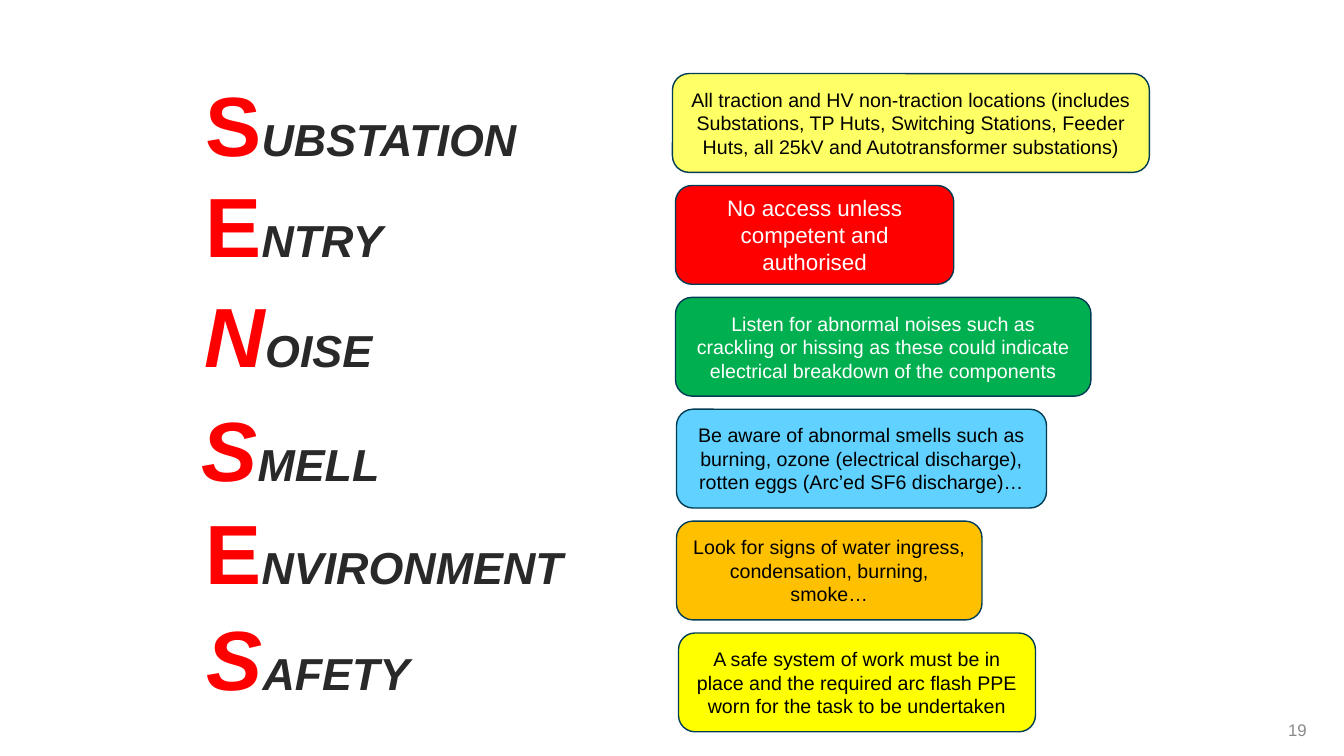
import pptx
import pptx.util
import pptx.dml.color
import pptx.enum.shapes
import pptx.enum.text

Inches = pptx.util.Inches
Pt = pptx.util.Pt
RGB = pptx.dml.color.RGBColor
ALIGN = pptx.enum.text.PP_ALIGN
MIDDLE = pptx.enum.text.MSO_ANCHOR.MIDDLE
ROUND = pptx.enum.shapes.MSO_SHAPE.ROUNDED_RECTANGLE

RED = RGB(0xFF, 0x00, 0x00)
DARK = RGB(0x29, 0x29, 0x29)
GREY = RGB(0x89, 0x89, 0x89)
NAVY = RGB(0x00, 0x3C, 0x54)
BLACK = RGB(0x00, 0x00, 0x00)
WHITE = RGB(0xFF, 0xFF, 0xFF)
LEMON = RGB(0xFF, 0xFF, 0x66)
GREEN = RGB(0x00, 0xB0, 0x50)
SKY = RGB(0x61, 0xD1, 0xFF)
AMBER = RGB(0xFF, 0xC0, 0x00)
YELLOW = RGB(0xFF, 0xFF, 0x00)

WORDS = [
    ("S", "UBSTATION", False, 1.94, 0.67),
    ("E", "NTRY", False, 1.94, 1.67),
    ("N", "OISE", True, 1.93, 2.76),
    ("S", "MELL", True, 1.9, 3.89),
    ("E", "NVIRONMENT", False, 1.94, 4.92),
    ("S", "AFETY", True, 1.95, 5.97),
]
NOTES = [
    ("All traction and HV non-traction locations (includes Substations, TP Huts, "
     "Switching Stations, Feeder Huts, all 25kV and Autotransformer substations)",
     6.67, 4.73, LEMON, BLACK, 14),
    ("No access unless competent and authorised", 6.7, 2.76, RED, WHITE, 16),
    ("Listen for abnormal noises such as crackling or hissing as these could "
     "indicate electrical breakdown of the components", 6.7, 4.12, GREEN, WHITE, 14),
    ("Be aware of abnormal smells such as burning, ozone (electrical discharge), "
     "rotten eggs (Arc’ed SF6 discharge)…", 6.71, 3.67, SKY, BLACK, 14),
    ("Look for signs of water ingress, condensation, burning, smoke…",
     6.71, 3.03, AMBER, BLACK, 14),
    ("A safe system of work must be in place and the required arc flash PPE worn "
     "for the task to be undertaken", 6.73, 3.54, YELLOW, BLACK, 14),
]
PAGE = "19"
TOP, PITCH, HIGH = 0.73, 1.11, 0.98


def style(run, size, color, bold=False, slant=False):
    font = run.font
    font.name = "Arial"
    font.size = Pt(size)
    font.color.rgb = color
    font.bold = bold
    font.italic = slant


def place(left, top, width, height):
    return [Inches(n) for n in (left, top, width, height)]


def add_word(slide, head, rest, slant, left, top):
    frame = slide.shapes.add_textbox(*place(left, top, 5.06, 1.11)).text_frame
    frame.word_wrap = True
    para = frame.paragraphs[0]
    for text, size, color, lean in ((head, 60, RED, slant), (rest, 32, DARK, True)):
        run = para.add_run()
        run.text = text
        style(run, size, color, True, lean)


def fill_text(shape, text, size, color, align):
    frame = shape.text_frame
    frame.word_wrap = True
    frame.vertical_anchor = MIDDLE
    frame.text = text
    para = frame.paragraphs[0]
    para.alignment = align
    style(para.runs[0], size, color)


def add_note(slide, row, text, left, width, fill, ink, size):
    spot = place(left, TOP + row * PITCH, width, HIGH)
    box = slide.shapes.add_shape(ROUND, *spot)
    box.shadow.inherit = False
    box.fill.solid()
    box.fill.fore_color.rgb = fill
    box.line.color.rgb = NAVY
    box.line.width = Pt(1)
    fill_text(box, text, size, ink, ALIGN.CENTER)


def main():
    deck = pptx.Presentation()
    deck.slide_width = Inches(13.33)
    deck.slide_height = Inches(7.5)
    slide = deck.slides.add_slide(deck.slide_layouts[6])
    for word in WORDS:
        add_word(slide, *word)
    for row, note in enumerate(NOTES):
        add_note(slide, row, *note)
    page = slide.shapes.add_textbox(*place(12.13, 7.14, 0.93, 0.2))
    fill_text(page, PAGE, 12, GREY, ALIGN.RIGHT)
    deck.save("out.pptx")


if __name__ == "__main__":
    main()
